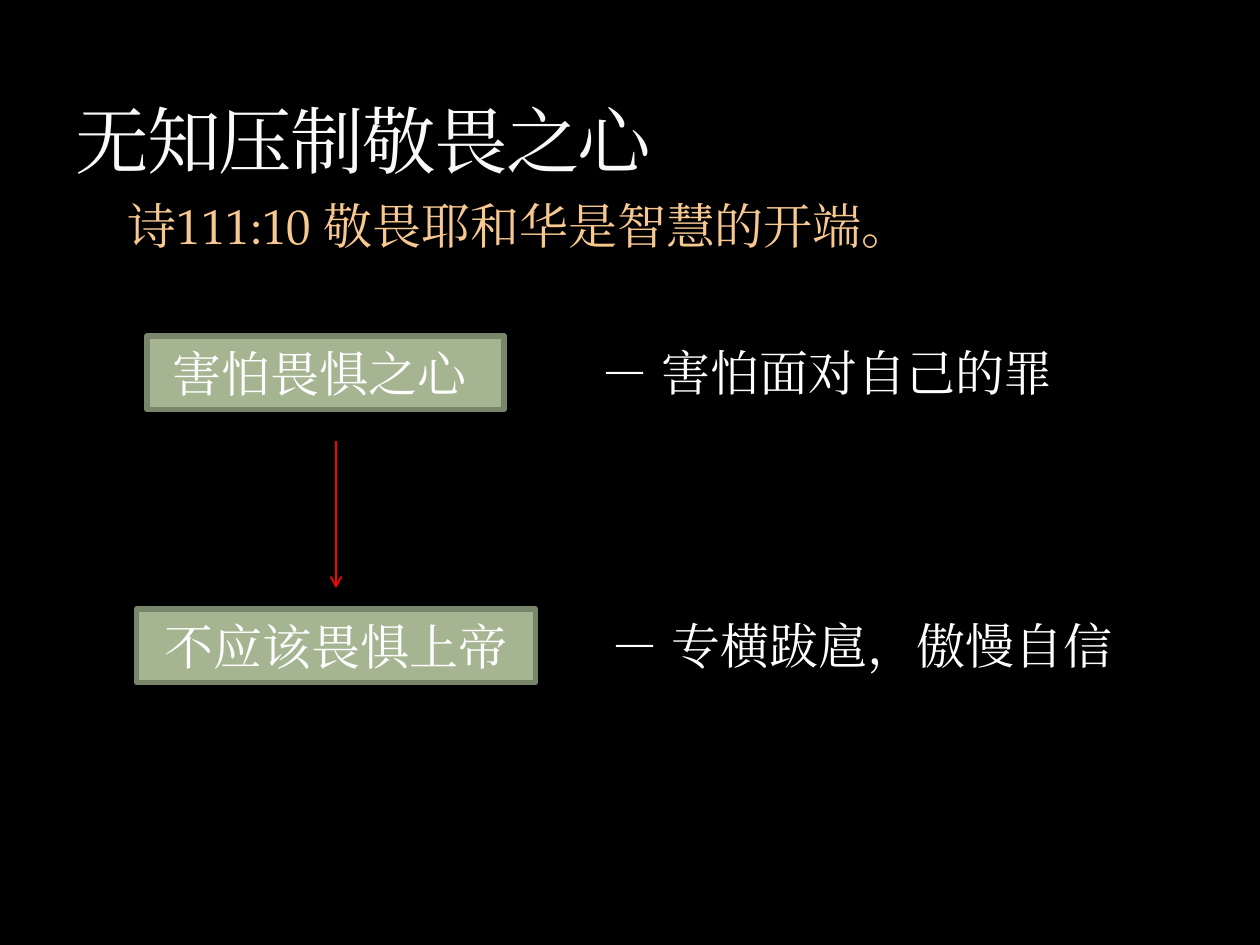
from lxml import etree
from pptx import Presentation
from pptx.dml.color import RGBColor
from pptx.enum.shapes import MSO_CONNECTOR, MSO_SHAPE
from pptx.enum.text import MSO_ANCHOR, PP_ALIGN
from pptx.oxml.ns import qn
from pptx.util import Pt

RECT, STRAIGHT = MSO_SHAPE.RECTANGLE, MSO_CONNECTOR.STRAIGHT
TOP, MIDDLE, BOTTOM = MSO_ANCHOR.TOP, MSO_ANCHOR.MIDDLE, MSO_ANCHOR.BOTTOM
CENTER = PP_ALIGN.CENTER
FONT = "TeX Gyre Pagella"
COLORS = {"background": "000000", "title": "F9F9F9", "verse": "F8C891",
          "text": "FFFFFF", "box": "A5B592", "border": "7A866C", "arrow": "FF0000"}


def rgb(name):
    """Return the named colour."""
    return RGBColor.from_string(COLORS[name])


def write(sp, text, color="text", size=28, anchor=TOP):
    """Put one formatted paragraph in a shape and return it."""
    tf = sp.text_frame
    tf.word_wrap = True
    tf.vertical_anchor = anchor
    p = tf.paragraphs[0]
    p.text = text
    font = p.runs[0].font
    font.name, font.size, font.color.rgb = FONT, Pt(size), rgb(color)
    for tag in ("a:ea", "a:cs"):
        etree.SubElement(p.runs[0]._r.rPr, qn(tag), typeface=FONT)
    return p


def add_text(s, box, text, **style):
    """Add a text box and return its paragraph."""
    return write(s.shapes.add_textbox(*map(Pt, box)), text, **style)


def add_title(s, box, text):
    """Add the slide title with tight letter spacing."""
    p = add_text(s, box, text, color="title", size=42, anchor=BOTTOM)
    p.runs[0]._r.rPr.set("spc", "-100")


def add_note(s, box, text):
    """Add a remark with a hanging indent."""
    p = add_text(s, box, text)
    p.space_before = Pt(6)
    pPr = p._p.get_or_add_pPr()
    pPr.set("marL", str(Pt(21.6)))
    pPr.set("indent", str(-Pt(21.6)))


def add_box(s, box, text):
    """Add a bordered box with centred text."""
    sp = s.shapes.add_shape(RECT, *map(Pt, box))
    sp.shadow.inherit = False
    sp.fill.solid()
    sp.fill.fore_color.rgb = rgb("box")
    sp.line.color.rgb = rgb("border")
    sp.line.width = Pt(3)
    write(sp, text, anchor=MIDDLE).alignment = CENTER


def add_arrow(s, x, top, bottom):
    """Add a downward arrow."""
    line = s.shapes.add_connector(STRAIGHT, Pt(x), Pt(top), Pt(x), Pt(bottom))
    line.line.color.rgb = rgb("arrow")
    line.line.width = Pt(1)
    etree.SubElement(line.line._get_or_add_ln(), qn("a:tailEnd"), type="arrow")
    etree.SubElement(line._element.spPr, qn("a:effectLst"))


def main():
    """Build and save the slide."""
    prs = Presentation()
    prs.slide_width, prs.slide_height = Pt(720), Pt(540)
    s = prs.slides.add_slide(prs.slide_layouts[6])
    s.background.fill.solid()
    s.background.fill.fore_color.rgb = rgb("background")

    add_title(s, (36, 12, 648, 96), "无知压制敬畏之心")
    add_text(s, (66, 108, 504, 41), "诗111:10 敬畏耶和华是智慧的开端。", color="verse")
    add_note(s, (336, 192, 282, 60), "－ 害怕面对自己的罪")
    add_note(s, (342, 348, 318, 60), "－ 专横跋扈，傲慢自信")
    add_arrow(s, 192, 252, 336)
    add_box(s, (84, 192, 204, 42), "害怕畏惧之心 ")
    add_box(s, (78, 348, 228, 42), " 不应该畏惧上帝 ")
    prs.save("out.pptx")


if __name__ == "__main__":
    main()
